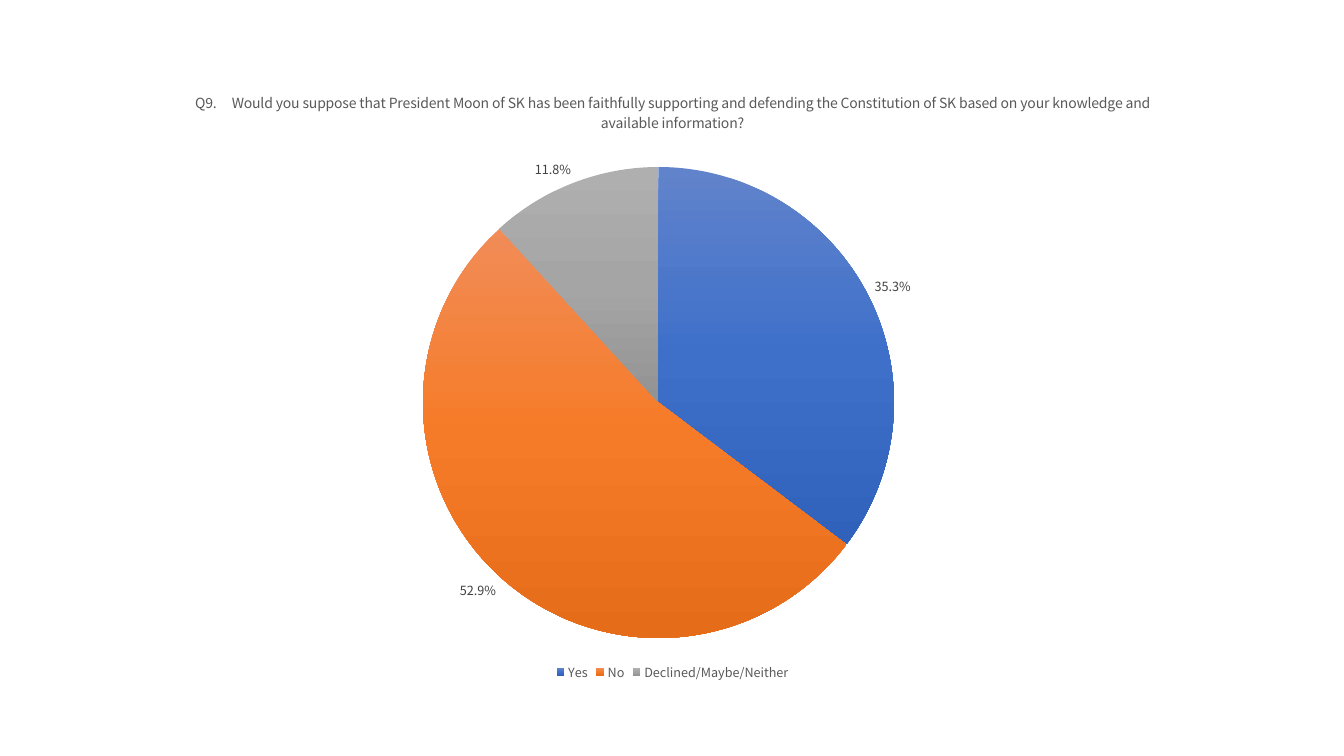
from copy import deepcopy

from pptx import Presentation
from pptx.chart.data import CategoryChartData
from pptx.dml.color import RGBColor
from pptx.enum.chart import XL_CHART_TYPE, XL_LABEL_POSITION, XL_LEGEND_POSITION
from pptx.oxml import parse_xml
from pptx.oxml.ns import nsdecls
from pptx.util import Pt

EMU_PER_PX = 914400 / 100.8
FONT = "Noto Sans CJK KR"
BLACK = RGBColor(0x00, 0x00, 0x00)
GRAY = RGBColor(0x59, 0x59, 0x59)
DARK_GRAY = RGBColor(0x40, 0x40, 0x40)
BLUES = (RGBColor(0x61, 0x83, 0xCB), RGBColor(0x3E, 0x70, 0xCA), RGBColor(0x30, 0x62, 0xBB))
ORANGES = (RGBColor(0xF1, 0x8C, 0x57), RGBColor(0xF6, 0x7B, 0x28), RGBColor(0xE5, 0x6C, 0x19))
GRAYS = (RGBColor(0xAF, 0xAF, 0xAF), RGBColor(0xA5, 0xA5, 0xA5), RGBColor(0x93, 0x93, 0x93))

QUESTION = (
    "Q9.     Would you suppose that President Moon of SK has been faithfully supporting "
    "and defending the Constitution of SK based on your knowledge and available information?"
)
# Answer, share, gradient from top to bottom
ANSWERS = [
    ("Yes", 0.353, BLUES),
    ("No", 0.529, ORANGES),
    ("Declined/Maybe/Neither", 0.118, GRAYS),
]


def px(length):
    return round(length * EMU_PER_PX)


def style_font(font, size, color):
    font.name = FONT
    font.size = Pt(size)
    font.bold = False
    font.color.rgb = color


def fill_gradient(fill, colors):
    """Shade a fill evenly from the first colour at the top to the last at the bottom."""
    fill.gradient()
    fill.gradient_angle = 270
    first_stop = fill.gradient_stops[0].element
    for _ in colors[2:]:
        first_stop.addnext(deepcopy(first_stop))
    for i, (stop, color) in enumerate(zip(fill.gradient_stops, colors)):
        stop.position = i / (len(colors) - 1)
        stop.color.rgb = color


def place_pie(chart, left, top, diameter, width, height):
    """Fix the pie's square inside a chart of the given width and height."""
    plot_area = chart.element.xpath("c:chart/c:plotArea")[0]
    for layout in plot_area.xpath("c:layout"):
        plot_area.remove(layout)
    shares = {"x": left / width, "y": top / height,
              "w": diameter / width, "h": diameter / height}
    values = "".join(f'<c:{key} val="{share:.4f}"/>' for key, share in shares.items())
    plot_area.insert(0, parse_xml(
        f'<c:layout {nsdecls("c")}><c:manualLayout><c:layoutTarget val="inner"/>'
        f'<c:xMode val="edge"/><c:yMode val="edge"/>{values}</c:manualLayout></c:layout>'))


def add_survey_pie(slide, left, top, width, height):
    data = CategoryChartData(number_format="0.0%")
    data.categories = [answer for answer, _, _ in ANSWERS]
    data.add_series(QUESTION, [share for _, share, _ in ANSWERS])
    chart = slide.shapes.add_chart(
        XL_CHART_TYPE.PIE, px(left), px(top), px(width), px(height), data).chart
    style_font(chart.font, 10, BLACK)

    # Question
    chart.has_title = True
    question = chart.chart_title.text_frame
    question.text = QUESTION
    style_font(question.paragraphs[0].font, 10, GRAY)
    chart.chart_title.include_in_layout = False

    # Slices
    pie = chart.plots[0]
    pie.vary_by_categories = True
    for i, (_, _, colors) in enumerate(ANSWERS):
        fill_gradient(pie.series[0].points[i].format.fill, colors)
    place_pie(chart, 352, 96, 471, width, height)

    # Percentages
    pie.has_data_labels = True
    percentages = pie.data_labels
    percentages.show_value = True
    percentages.show_percentage = False
    percentages.number_format = "0.0%"
    percentages.number_format_is_linked = False
    percentages.position = XL_LABEL_POSITION.OUTSIDE_END
    style_font(percentages.font, 9, DARK_GRAY)

    # Legend
    chart.has_legend = True
    chart.legend.position = XL_LEGEND_POSITION.BOTTOM
    chart.legend.include_in_layout = False
    style_font(chart.legend.font, 9, GRAY)


def main():
    presentation = Presentation()
    presentation.slide_width = px(1344)
    presentation.slide_height = px(756)
    slide = presentation.slides.add_slide(presentation.slide_layouts[6])
    add_survey_pie(slide, 71, 71, 1203, 614)
    presentation.save("out.pptx")


if __name__ == "__main__":
    main()
